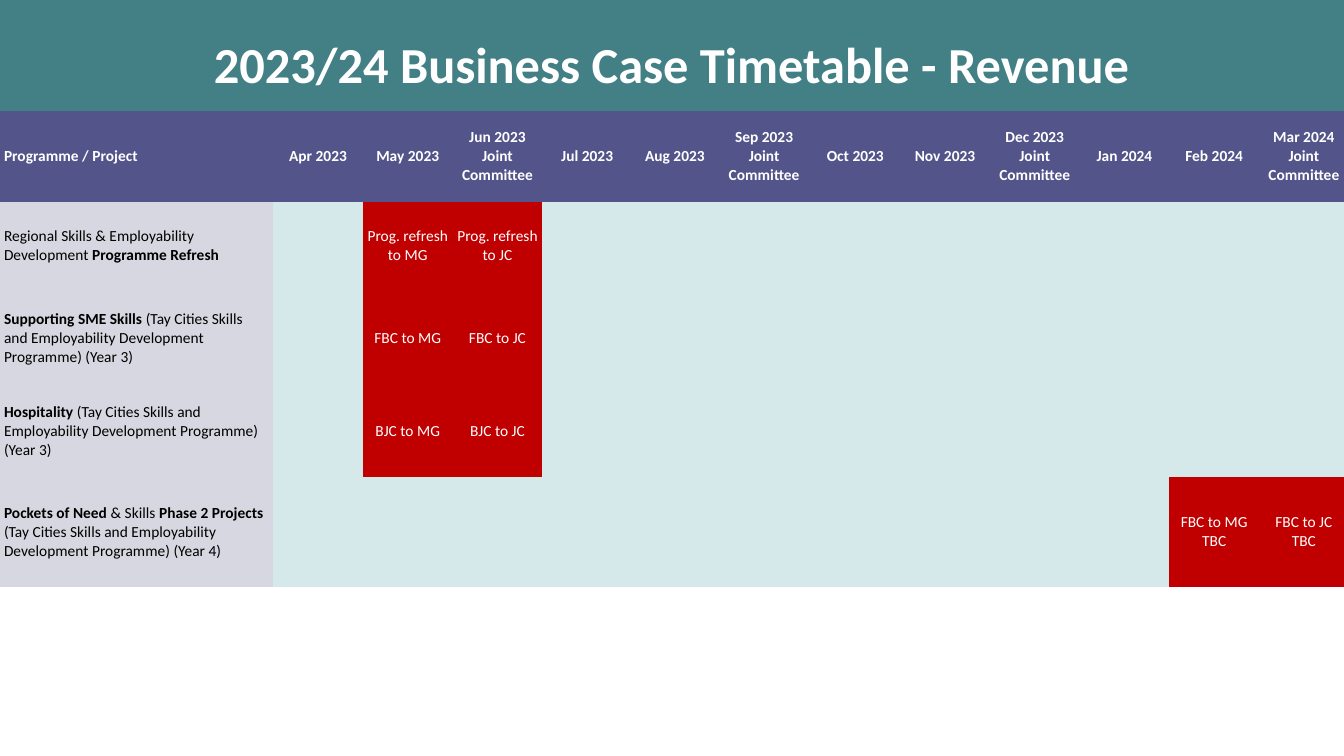
from dataclasses import dataclass

from pptx import Presentation
from pptx.dml.color import RGBColor
from pptx.enum.shapes import MSO_SHAPE
from pptx.enum.text import MSO_ANCHOR as Anchor, PP_ALIGN as Align
from pptx.util import Inches, Pt


@dataclass(frozen=True)
class Theme:
    font: str = "Calibri"
    title_size: int = 36
    table_size: int = 11
    banner: str = "438086"
    header: str = "53548A"
    project: str = "D6D7E0"
    idle: str = "D6E9EA"
    milestone: str = "C00000"
    light: str = "FFFFFF"
    dark: str = "000000"


THEME = Theme()
NO_STYLE_NO_GRID = "{2D5ABB26-0587-4C30-8999-92F81FD0307C}"
COLUMN_WIDTHS = [2.71] + [0.89] * 4 + [0.85, 0.92] + [0.89] * 6
ROW_HEIGHTS = [0.9, 0.88, 0.95, 0.9, 1.09]
CELL_FORMAT = {
    "vertical_anchor": Anchor.MIDDLE,
    "margin_left": Inches(0.04),
    "margin_right": Inches(0.04),
    "margin_top": Inches(0.02),
    "margin_bottom": Inches(0.02),
}

MONTHS = [
    "Apr 2023", "May 2023", "Jun 2023\nJoint Committee", "Jul 2023",
    "Aug 2023", "Sep 2023\nJoint Committee", "Oct 2023", "Nov 2023",
    "Dec 2023\nJoint Committee", "Jan 2024", "Feb 2024",
    "Mar 2024 Joint Committee",
]
SKILLS_PROGRAMME = "(Tay Cities Skills and Employability Development Programme)"

# Each project: label runs as (text, bold), then milestones by month column.
PROJECTS = [
    ([("Regional Skills & Employability Development ", False),
      ("Programme Refresh", True)],
     {2: "Prog. refresh to MG", 3: "Prog. refresh to JC"}),
    ([("Supporting SME Skills", True),
      (f" {SKILLS_PROGRAMME} (Year 3)", False)],
     {2: "FBC to MG", 3: "FBC to JC"}),
    ([("Hospitality ", True), (f"{SKILLS_PROGRAMME} (Year 3)", False)],
     {2: "BJC to MG", 3: "BJC to JC"}),
    ([("Pockets of Need ", True), ("& Skills ", False),
      ("Phase 2 Projects ", True), (f"{SKILLS_PROGRAMME} (Year 4)", False)],
     {11: "FBC to MG TBC", 12: "FBC to JC TBC"}),
]


def set_format(target, values):
    for name, value in values.items():
        setattr(target, name, value)


def paint(target, color):
    target.fill.solid()
    target.fill.fore_color.rgb = RGBColor.from_string(color)


def add_run(paragraph, text, size, color, bold):
    run = paragraph.add_run()
    run.text = text
    set_format(run.font, {"name": THEME.font, "size": Pt(size), "bold": bold})
    run.font.color.rgb = RGBColor.from_string(color)


def add_banner(slide, text):
    banner = slide.shapes.add_shape(
        MSO_SHAPE.RECTANGLE, 0, 0, Inches(13.33), Inches(1.25))
    banner.shadow.inherit = False
    paint(banner, THEME.banner)
    banner.line.fill.background()
    banner.text_frame.vertical_anchor = Anchor.MIDDLE
    paragraph = banner.text_frame.paragraphs[0]
    paragraph.alignment = Align.CENTER
    add_run(paragraph, text, THEME.title_size, THEME.light, True)


def add_plain_table(slide):
    """Add the timetable grid without bands or borders."""
    table = slide.shapes.add_table(
        len(ROW_HEIGHTS), len(COLUMN_WIDTHS), 0, Inches(1.1),
        Inches(sum(COLUMN_WIDTHS)), Inches(sum(ROW_HEIGHTS))).table
    set_format(table, {"first_row": False, "horz_banding": False})
    table._tbl.tblPr[0].text = NO_STYLE_NO_GRID
    for column, width in zip(table.columns, COLUMN_WIDTHS):
        column.width = Inches(width)
    for row, height in zip(table.rows, ROW_HEIGHTS):
        row.height = Inches(height)
    return table


def fill_cell(cell, lines, fill, color, alignment=Align.CENTER):
    """Write lines, each a list of (text, bold) runs, into a filled cell."""
    paint(cell, fill)
    set_format(cell, CELL_FORMAT)
    frame = cell.text_frame
    for index, runs in enumerate(lines):
        paragraph = frame.add_paragraph() if index else frame.paragraphs[0]
        paragraph.alignment = alignment
        for text, bold in runs:
            add_run(paragraph, text, THEME.table_size, color, bold)


def fill_header(table):
    fill_cell(table.cell(0, 0), [[("Programme / Project", True)]],
              THEME.header, THEME.light, Align.LEFT)
    for column, month in enumerate(MONTHS, 1):
        lines = [[(line, True)] for line in month.split("\n")]
        fill_cell(table.cell(0, column), lines, THEME.header, THEME.light)


def fill_project(table, row, label, milestones):
    fill_cell(table.cell(row, 0), [label], THEME.project, THEME.dark, Align.LEFT)
    for column in range(1, len(COLUMN_WIDTHS)):
        cell = table.cell(row, column)
        if column in milestones:
            fill_cell(cell, [[(milestones[column], False)]],
                      THEME.milestone, THEME.light)
        else:
            paint(cell, THEME.idle)


def main():
    presentation = Presentation()
    set_format(presentation, {"slide_width": Inches(13.33),
                              "slide_height": Inches(7.5)})
    slide = presentation.slides.add_slide(presentation.slide_layouts[6])
    add_banner(slide, "2023/24 Business Case Timetable - Revenue")
    table = add_plain_table(slide)
    fill_header(table)
    for row, (label, milestones) in enumerate(PROJECTS, 1):
        fill_project(table, row, label, milestones)
    presentation.save("out.pptx")


if __name__ == "__main__":
    main()
